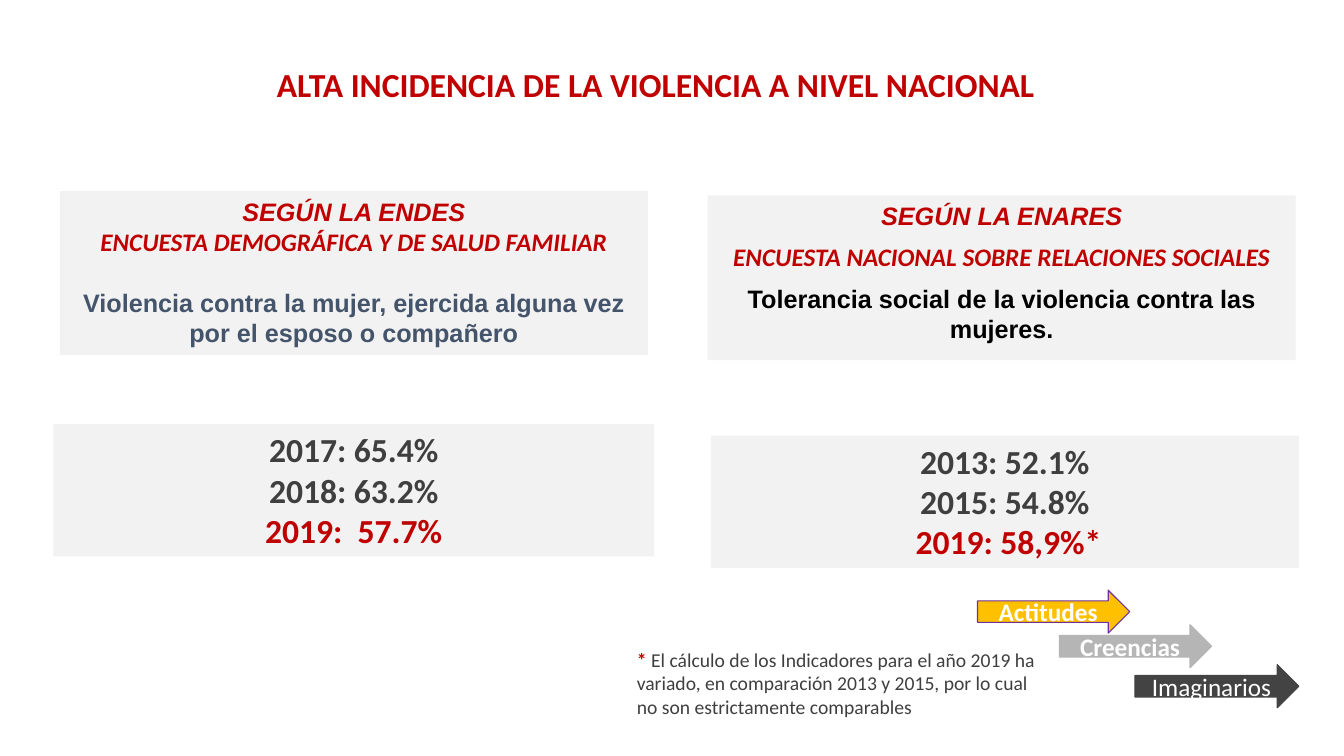
"""Build a slide on the national incidence of violence, with two survey columns."""
from pptx import Presentation
from pptx.dml.color import RGBColor
from pptx.enum.shapes import MSO_SHAPE
from pptx.enum.text import MSO_ANCHOR, PP_ALIGN
from pptx.util import Pt

PX = 9525
RED = RGBColor(0xC0, 0x00, 0x00)
SLATE = RGBColor(0x44, 0x54, 0x6A)
BLACK = RGBColor(0x00, 0x00, 0x00)
WHITE = RGBColor(0xFF, 0xFF, 0xFF)
CHARCOAL = RGBColor(0x3F, 0x3F, 0x3F)
PANEL = RGBColor(0xF2, 0xF2, 0xF2)
AMBER = RGBColor(0xFF, 0xC0, 0x00)
PURPLE = RGBColor(0x70, 0x30, 0xA0)
SILVER = RGBColor(0xB5, 0xB5, 0xB5)
GRAPHITE = RGBColor(0x43, 0x43, 0x43)


def write(para, text, size=18, font="Calibri", color=RED, bold=True, italic=False,
          align=PP_ALIGN.CENTER, before=0, after=0, indent=0):
    """Add a formatted run to a paragraph."""
    if indent:
        properties = para._p.get_or_add_pPr()
        properties.set("marL", "0")
        properties.set("indent", str(indent * PX))
    para.alignment = align
    para.space_before, para.space_after = Pt(before), Pt(after)
    span = para.add_run()
    span.text = text
    span.font.size, span.font.name = Pt(size), font
    span.font.bold, span.font.italic = bold, italic
    span.font.color.rgb = color


def add_block(kind, bounds, fill, line=None):
    """Add a filled shape and return it."""
    block = page.shapes.add_shape(kind, *[value * PX for value in bounds])
    block.shadow.inherit = False
    block.fill.solid()
    block.fill.fore_color.rgb = fill
    if line is None:
        block.line.fill.background()
    else:
        block.line.color.rgb = line
        block.line.width = Pt(0.85)
    block.text_frame.word_wrap = True
    return block


deck = Presentation()
deck.slide_width, deck.slide_height = 1280 * PX, 720 * PX
page = deck.slides.add_slide(deck.slide_layouts[5])

title = page.shapes.title
title.left, title.top, title.width, title.height = 254 * PX, 56 * PX, 755 * PX, 48 * PX
title.text_frame.word_wrap = True
title.text_frame.vertical_anchor = MSO_ANCHOR.TOP
write(title.text_frame.paragraphs[0], "ALTA INCIDENCIA DE LA VIOLENCIA A NIVEL NACIONAL",
      size=24, align=PP_ALIGN.LEFT)

heading = dict(font="Arial", italic=True)
survey = dict(italic=True)
year = dict(size=24, color=CHARCOAL)
latest = dict(size=24)
panels = [
    ((57, 182, 560, 156), 0, [
        ("SEGÚN LA ENDES", heading),
        ("ENCUESTA DEMOGRÁFICA Y DE SALUD FAMILIAR", survey),
        ("Violencia contra la mujer, ejercida alguna vez por el esposo o compañero",
         dict(font="Arial", color=SLATE, before=22))]),
    ((51, 404, 572, 126), 0, [
        ("2017: 65.4%", dict(year, indent=-29)),
        ("2018: 63.2%", dict(year, indent=-15)),
        ("2019:  57.7%", dict(latest, indent=-7))]),
    ((674, 186, 560, 157), 8, [
        ("SEGÚN LA ENARES", heading),
        ("ENCUESTA NACIONAL SOBRE RELACIONES SOCIALES", dict(survey, indent=-12)),
        ("Tolerancia social de la violencia contra las mujeres.",
         dict(font="Arial", color=BLACK))]),
    ((677, 415, 560, 126), 0, [
        ("2013: 52.1%", year),
        ("2015: 54.8%", dict(year, indent=-7)),
        ("2019: 58,9%*", dict(latest, indent=7))]),
]
for bounds, after, lines in panels:
    frame = add_block(MSO_SHAPE.RECTANGLE, bounds, PANEL).text_frame
    frame.vertical_anchor = MSO_ANCHOR.TOP
    for index, (text, style) in enumerate(lines):
        para = frame.add_paragraph() if index else frame.paragraphs[0]
        write(para, text, after=after, **style)

note = page.shapes.add_textbox(597 * PX, 612 * PX, 404 * PX, 78 * PX)
note.text_frame.word_wrap = True
note_para = note.text_frame.paragraphs[0]
write(note_para, "* ", size=14, align=PP_ALIGN.LEFT)
write(note_para, "El cálculo de los Indicadores para el año 2019 ha variado, en comparación "
      "2013 y 2015, por lo cual no son estrictamente comparables",
      size=14, color=CHARCOAL, bold=False, align=PP_ALIGN.LEFT)

arrows = [
    ("Actitudes", (931, 562, 145, 41), AMBER, PURPLE, True),
    ("Creencias", (1009, 595, 145, 41), SILVER, SILVER, True),
    ("Imaginarios", (1081, 633, 156, 41), GRAPHITE, GRAPHITE, False),
]
for label, bounds, fill, line, bold in arrows:
    arrow = add_block(MSO_SHAPE.RIGHT_ARROW, bounds, fill, line)
    arrow.text_frame.vertical_anchor = MSO_ANCHOR.MIDDLE
    write(arrow.text_frame.paragraphs[0], label, color=WHITE, bold=bold)

deck.save("out.pptx")
